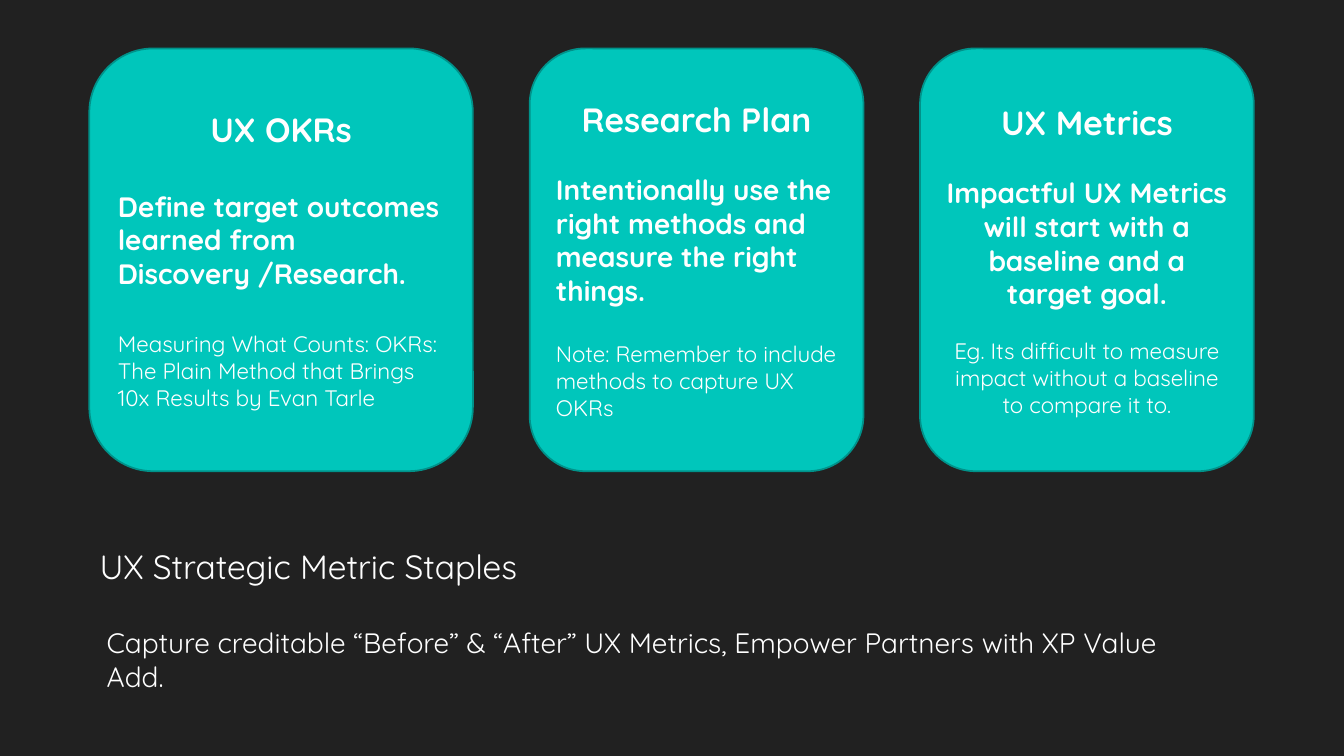
import pptx
import pptx.util
import pptx.dml.color
import pptx.enum.shapes
import pptx.enum.text

Pt = pptx.util.Pt
ALIGN = pptx.enum.text.PP_ALIGN
ANCHOR = pptx.enum.text.MSO_ANCHOR

FONT = "Quicksand"
WHITE, OFF_WHITE, DARK, TEAL, DEEP_TEAL = "FFFFFF", "FEFEFE", "212121", "00C6BB", "00928A"
CARD_TOP, CARD_HEIGHT = 34.6, 302

# left, width, body alignment, gap above message, gap above note, texts
CARDS = [
    (63.8, 274, ALIGN.LEFT, 28.8, 28.8,
     ("UX OKRs",
      "Define target outcomes learned from Discovery /Research.",
      "Measuring What Counts: OKRs: The Plain Method that Brings 10x Results by Evan Tarle")),
    (378.4, 238.4, ALIGN.LEFT, 24, 24,
     ("Research Plan",
      "Intentionally use the right methods and measure the right things.",
      "Note: Remember to include methods to capture UX OKRs")),
    (657.2, 238.4, ALIGN.CENTER, 24, 19.2,
     ("UX Metrics",
      "Impactful UX Metrics will start with a baseline and a target goal.",
      "Eg. Its difficult to measure impact without a baseline to compare it to.")),
]


def rgb(value):
    return pptx.dml.color.RGBColor.from_string(value)


def write_paragraph(p, text, size, color=WHITE, bold=False, **layout):
    """Fill a paragraph; layout holds its alignment and spacing."""
    for name, value in layout.items():
        setattr(p, name, value)
    r = p.add_run()
    r.text = text
    for name, value in {"name": FONT, "size": Pt(size), "bold": bold}.items():
        setattr(r.font, name, value)
    r.font.color.rgb = rgb(color)


def add_text(s, box, anchor, text, size, color, **layout):
    tf = s.shapes.add_textbox(*map(Pt, box)).text_frame
    tf.word_wrap = True
    tf.vertical_anchor = anchor
    write_paragraph(tf.paragraphs[0], text, size, color, **layout)


def add_card(s, left, width, align, message_gap, note_gap, texts):
    sp = s.shapes.add_shape(pptx.enum.shapes.MSO_SHAPE.ROUNDED_RECTANGLE,
                            Pt(left), Pt(CARD_TOP), Pt(width), Pt(CARD_HEIGHT))
    sp.shadow.inherit = False
    sp.fill.solid()
    sp.fill.fore_color.rgb = rgb(TEAL)
    sp.line.color.rgb = rgb(DEEP_TEAL)
    sp.line.width = Pt(1.25)
    tf = sp.text_frame
    tf.word_wrap = True
    tf.vertical_anchor = ANCHOR.MIDDLE
    heading, message, note = texts
    write_paragraph(tf.paragraphs[0], heading, 24, bold=True, alignment=ALIGN.CENTER)
    write_paragraph(tf.add_paragraph(), message, 20, bold=True,
                    alignment=align, space_before=Pt(message_gap))
    write_paragraph(tf.add_paragraph(), note, 16,
                    alignment=align, space_before=Pt(note_gap))


def main():
    prs = pptx.Presentation()
    prs.slide_width, prs.slide_height = Pt(960), Pt(540)
    s = prs.slides.add_slide(prs.slide_layouts[6])
    s.background.fill.solid()
    s.background.fill.fore_color.rgb = rgb(DARK)

    add_text(s, (64.1, 378, 831.6, 44.6), ANCHOR.BOTTOM,
             "UX Strategic Metric Staples", 24, OFF_WHITE)
    add_text(s, (69.1, 426, 775.4, 90), ANCHOR.MIDDLE,
             "Capture creditable “Before” & “After” UX Metrics, "
             "Empower Partners with XP Value Add.",
             20, WHITE, space_before=Pt(4), space_after=Pt(6))
    for card in CARDS:
        add_card(s, *card)
    prs.save("out.pptx")


if __name__ == "__main__":
    main()
